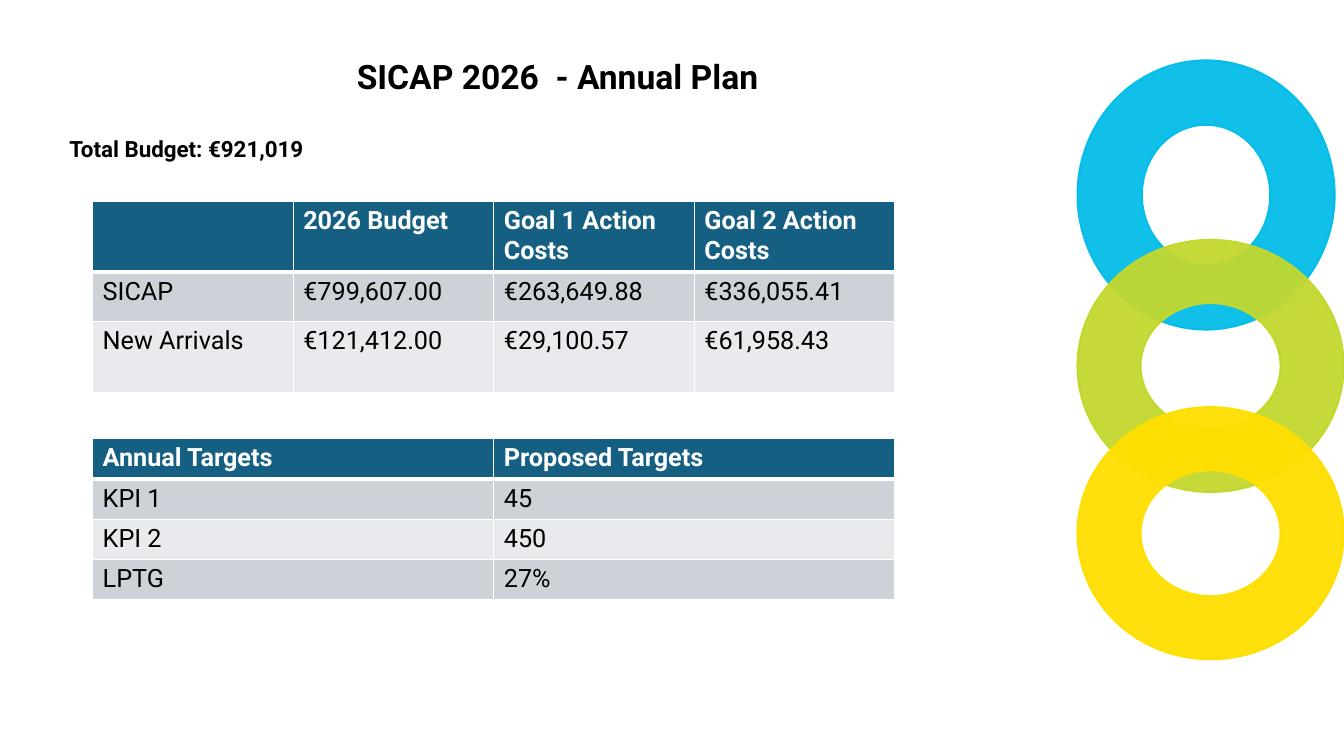
"""Build the SICAP 2026 annual plan slide with two tables and three rings."""
from lxml import etree
from pptx import Presentation
from pptx.dml.color import RGBColor
from pptx.enum.shapes import MSO_SHAPE
from pptx.enum.text import MSO_ANCHOR, PP_ALIGN
from pptx.oxml.ns import qn
from pptx.util import Pt

DONUT = MSO_SHAPE.DONUT
MIDDLE = MSO_ANCHOR.MIDDLE
CENTER, LEFT = PP_ALIGN.CENTER, PP_ALIGN.LEFT
FONT = "Roboto"
COLORS = {
    "blue": "05BDE8", "green": "C3D82F", "yellow": "FFDF00",
    "header": "156082", "band": "CCD2D8", "light": "E8EAED",
    "white": "FFFFFF", "black": "000000",
}


def add_run(p, text, size, color, bold):
    r = p.add_run()
    r.text = text
    r.font.name = FONT
    r.font.size = Pt(size)
    r.font.bold = bold
    r.font.color.rgb = RGBColor.from_string(COLORS[color])


def set_border(cell, side, width):
    tcPr = cell._tc.get_or_add_tcPr()
    ln = etree.SubElement(tcPr, qn(f"a:ln{side}"), w=str(Pt(width)))
    fill = etree.SubElement(ln, qn("a:solidFill"))
    etree.SubElement(fill, qn("a:srgbClr"), val=COLORS["white"])


prs = Presentation()
prs.slide_width, prs.slide_height = Pt(960), Pt(540)
s = prs.slides.add_slide(prs.slide_layouts[6])

rings = [
    ("blue", 43.2, 183.6, 192.2),
    ("green", 171.4, 190.1, 180),
    ("yellow", 290.9, 190.1, 180),
]
for color, top, width, height in rings:
    sp = s.shapes.add_shape(DONUT, Pt(769.7), Pt(top), Pt(width), Pt(height))
    sp.shadow.inherit = False
    sp.fill.solid()
    sp.fill.fore_color.rgb = RGBColor.from_string(COLORS[color])
    clr = sp.fill._xPr.find(qn("a:solidFill"))[0]
    etree.SubElement(clr, qn("a:alpha"), val="95000")
    sp.line.color.rgb = RGBColor.from_string(COLORS[color])
    sp.line.width = Pt(1.5)

tf = s.shapes.add_textbox(Pt(42.5), Pt(35.3), Pt(711.4), Pt(85)).text_frame
tf.word_wrap = True
tf.vertical_anchor = MIDDLE
p = tf.paragraphs[0]
p.alignment = CENTER
add_run(p, "SICAP 2026  - Annual Plan", 24, "black", True)
p = tf.add_paragraph()
p.alignment = LEFT
p.space_before = Pt(28)
add_run(p, "Total Budget: €921,019", 16, "black", True)

tables = [
    (144, [49.3, 35.3, 50.4], [
        ["", "2026 Budget", "Goal 1 Action Costs", "Goal 2 Action Costs"],
        ["SICAP", "€799,607.00", "€263,649.88", "€336,055.41"],
        ["New Arrivals", "€121,412.00", "€29,100.57", "€61,958.43"],
    ]),
    (313.2, [28.8] * 4, [
        ["Annual Targets", "Proposed Targets"],
        ["KPI 1", "45"],
        ["KPI 2", "450"],
        ["LPTG", "27%"],
    ]),
]
TABLE_WIDTH = 573.1
for top, heights, rows in tables:
    columns = len(rows[0])
    table = s.shapes.add_table(len(rows), columns, Pt(66.2), Pt(top),
                               Pt(TABLE_WIDTH), Pt(sum(heights))).table
    for column in table.columns:
        column.width = Pt(TABLE_WIDTH / columns)
    for i, values in enumerate(rows):
        table.rows[i].height = Pt(heights[i])
        header = i == 0
        fill = "header" if header else ("band" if i % 2 else "light")
        for j, value in enumerate(values):
            cell = table.cell(i, j)
            for side in "LRTB":
                thick = (header and side == "B") or (i == 1 and side == "T")
                set_border(cell, side, 3 if thick else 1)
            cell.fill.solid()
            cell.fill.fore_color.rgb = RGBColor.from_string(COLORS[fill])
            if value:
                add_run(cell.text_frame.paragraphs[0], value, 18,
                        "white" if header else "black", header)

prs.save("out.pptx")
